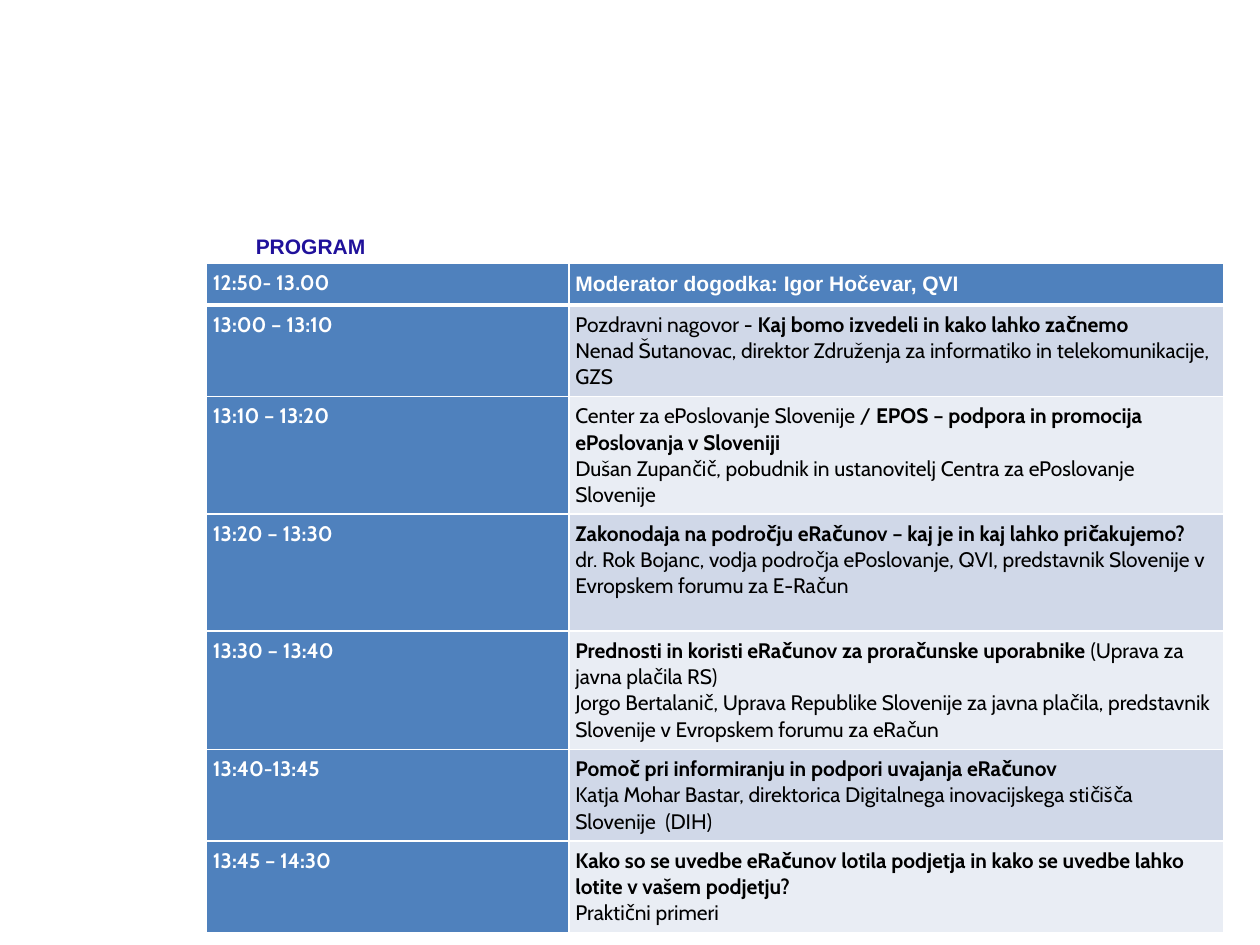
from lxml import etree
from pptx import Presentation, util as u
from pptx.dml.color import RGBColor
from pptx.oxml import ns

COLORS = {"title": "20119B", "header": "4F81BD", "odd": "D0D8E8",
          "even": "E9EDF4", "white": "FFFFFF", "black": "000000"}
COLUMN_WIDTHS = [2.88, 5.2]
ROW_HEIGHTS = [0.33, 0.73, 0.93, 0.93, 0.94, 0.73, 0.73]
PROGRAM = [
    ("12:50- 13.00", [("Moderator dogodka: Igor Hočevar, QVI", True)]),
    ("13:00 – 13:10", [
        ("Pozdravni nagovor - ", False),
        ("Kaj bomo izvedeli in kako lahko začnemo\n", True),
        ("Nenad Šutanovac, direktor Združenja za informatiko in "
         "telekomunikacije, GZS", False)]),
    ("13:10 – 13:20", [
        ("Center za ePoslovanje Slovenije / ", False),
        ("EPOS – podpora in promocija ePoslovanja v Sloveniji\n", True),
        ("Dušan Zupančič, pobudnik in ustanovitelj Centra za ePoslovanje "
         "Slovenije", False)]),
    ("13:20 – 13:30", [
        ("Zakonodaja na področju eRačunov – kaj je in kaj lahko pričakujemo?\n", True),
        ("dr. Rok Bojanc, vodja področja ePoslovanje, QVI, predstavnik "
         "Slovenije v Evropskem forumu za E-Račun", False)]),
    ("13:30 – 13:40", [
        ("Prednosti in koristi eRačunov za proračunske uporabnike ", True),
        ("(Uprava za javna plačila RS)\nJorgo Bertalanič, Uprava Republike "
         "Slovenije za javna plačila, predstavnik Slovenije v Evropskem "
         "forumu za eRačun", False)]),
    ("13:40-13:45", [
        ("Pomoč pri informiranju in podpori uvajanja eRačunov\n", True),
        ("Katja Mohar Bastar, direktorica Digitalnega inovacijskega stičišča "
         "Slovenije  (DIH)", False)]),
    ("13:45 – 14:30", [
        ("Kako so se uvedbe eRačunov lotila podjetja in kako se uvedbe lahko "
         "lotite v vašem podjetju?\n", True),
        ("Praktični primeri", False)]),
]


def set_font(font, name, color):
    """Set the common size with the given typeface and colour."""
    font.name = name
    font.size = u.Pt(12)
    font.color.rgb = RGBColor.from_string(COLORS[color])


def add_runs(paragraph, parts):
    """Add (text, bold) parts, turning newlines into line breaks."""
    for content, bold in parts:
        for index, line in enumerate(content.split("\n")):
            if index:
                paragraph.add_line_break()
            if line:
                run = paragraph.add_run()
                run.text = line
                run.font.bold = bold


def set_borders(cell, bottom):
    """Draw white cell borders with the given bottom width in points."""
    properties = cell._tc.get_or_add_tcPr()
    for side, width in (("L", 1), ("R", 1), ("T", 1), ("B", bottom)):
        line = etree.SubElement(properties, ns.qn(f"a:ln{side}"), w=str(u.Pt(width)))
        fill = etree.SubElement(line, ns.qn("a:solidFill"))
        etree.SubElement(fill, ns.qn("a:srgbClr"), val=COLORS["white"])


def fill_cell(cell, parts, font_name, color, background, bottom):
    """Write and format one table cell."""
    cell.margin_left = cell.margin_right = u.Inches(0.05)
    cell.margin_top = cell.margin_bottom = u.Inches(0.05)
    set_borders(cell, bottom)
    cell.fill.solid()
    cell.fill.fore_color.rgb = RGBColor.from_string(COLORS[background])
    paragraph = cell.text_frame.paragraphs[0]
    paragraph.line_spacing = u.Pt(15)
    paragraph.space_after = u.Pt(7.5)
    set_font(paragraph.font, font_name, color)
    add_runs(paragraph, parts)


def add_title(slide, left, top, width, height):
    """Place the heading in the given box."""
    box = slide.shapes.add_textbox(*map(u.Inches, (left, top, width, height)))
    frame = box.text_frame
    frame.word_wrap = True
    frame.margin_left = frame.margin_right = 0
    frame.margin_top = frame.margin_bottom = 0
    paragraph = frame.paragraphs[0]
    set_font(paragraph.font, "Arial", "title")
    add_runs(paragraph, [("PROGRAM", True)])


def add_program(slide, left, top, width, height):
    """Place the schedule table in the given box."""
    frame = slide.shapes.add_table(len(PROGRAM), len(COLUMN_WIDTHS),
                                   *map(u.Inches, (left, top, width, height)))
    table = frame.table
    for column, share in zip(table.columns, COLUMN_WIDTHS):
        column.width = u.Inches(width * share / sum(COLUMN_WIDTHS))
    for row, share in zip(table.rows, ROW_HEIGHTS):
        row.height = u.Inches(height * share / sum(ROW_HEIGHTS))
    for index, (time, parts) in enumerate(PROGRAM):
        bottom = 1 if index else 3
        fill_cell(table.cell(index, 0), [(time, True)], "Cabin", "white",
                  "header", bottom)
        if index:
            style = ("Cabin", "black", "odd" if index % 2 else "even")
        else:
            style = ("Arial", "white", "header")
        fill_cell(table.cell(index, 1), parts, *style, bottom)


def main():
    """Build and save the programme slide."""
    presentation = Presentation()
    presentation.slide_width = u.Inches(10)
    presentation.slide_height = u.Inches(7.5)
    slide = presentation.slides.add_slide(presentation.slide_layouts[6])
    add_title(slide, 2.03, 1.85, 7.35, 0.48)
    add_program(slide, 1.64, 2.09, 8.07, 5.31)
    presentation.save("out.pptx")


if __name__ == "__main__":
    main()
